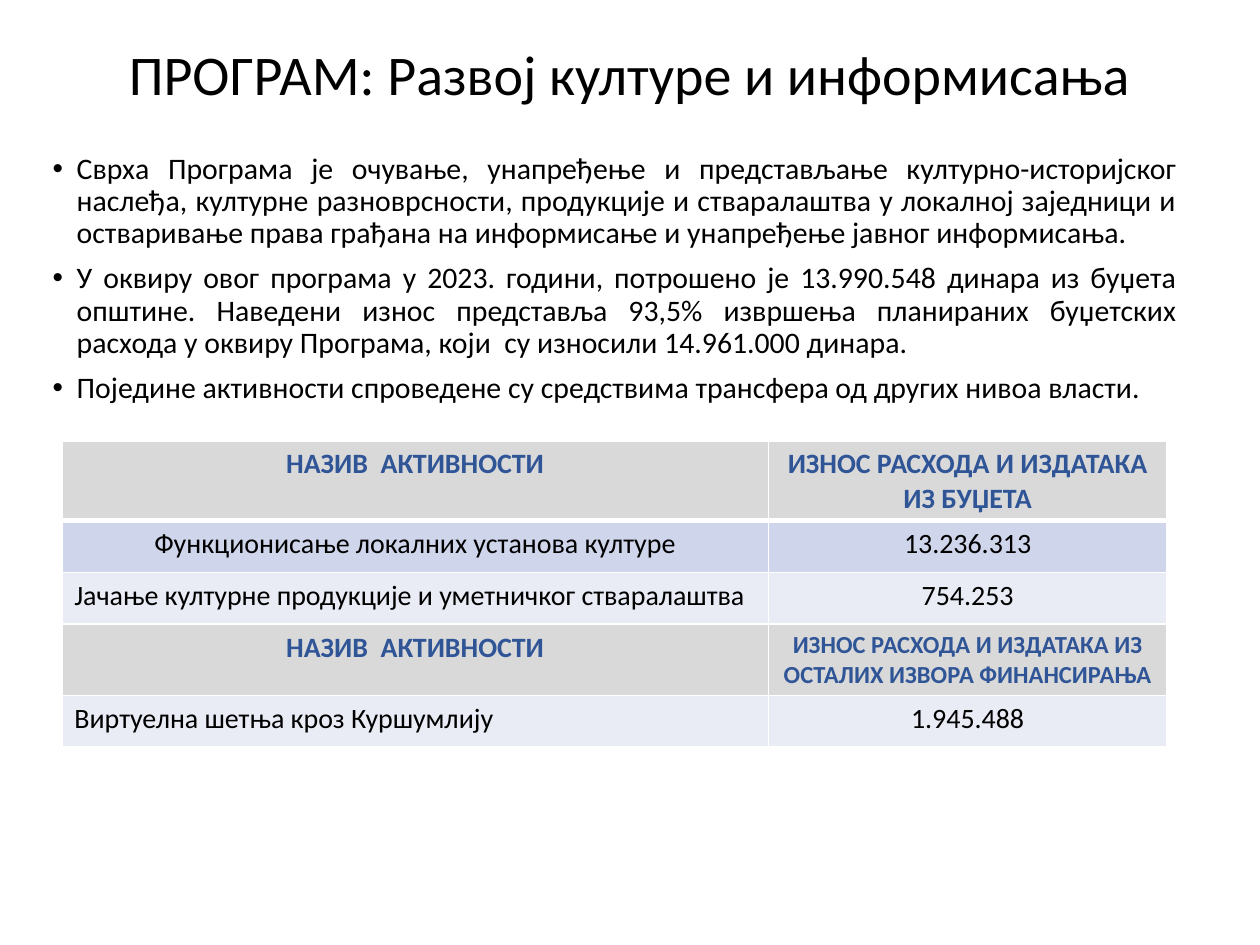
from lxml.etree import SubElement
from pptx import Presentation
from pptx.dml.color import RGBColor
from pptx.enum.text import MSO_ANCHOR, PP_ALIGN
from pptx.oxml.ns import qn
from pptx.util import Inches, Pt

BLACK, BLUE, WHITE = "000000", "2F5597", "FFFFFF"
GREY, LAVENDER, PALE = "D9D9D9", "CFD5EA", "E9EBF5"
LEFT, CENTER, JUSTIFY = PP_ALIGN.LEFT, PP_ALIGN.CENTER, PP_ALIGN.JUSTIFY

TITLE = "ПРОГРАМ: Развој културе и информисања"
BULLETS = [
    "Сврха Програма је очување, унапређење и представљање културно-историјског наслеђа, "
    "културне разноврсности, продукције и стваралаштва у локалној заједници и "
    "остваривање права грађана на информисање и унапређење јавног информисања.",
    "У оквиру овог програма у 2023. години, потрошено је 13.990.548 динара из буџета "
    "општине. Наведени износ представља 93,5% извршења планираних буџетских расхода "
    "у оквиру Програма, који  су износили 14.961.000 динара.",
    "Поједине активности спроведене су средствима трансфера од других нивоа власти.",
]
HEADING = {"size": 16, "bold": True, "color": BLUE}
ENTRY = {"size": 16, "bold": False, "color": BLACK}
ACTIVITY = ("НАЗИВ  АКТИВНОСТИ", CENTER, HEADING)
ROWS = [
    (GREY, [ACTIVITY, ("ИЗНОС РАСХОДА И ИЗДАТАКА ИЗ БУЏЕТА", CENTER, HEADING)]),
    (LAVENDER, [("Функционисање локалних установа културе", CENTER, ENTRY),
                ("13.236.313", CENTER, ENTRY)]),
    (PALE, [("Јачање културне продукције и уметничког стваралаштва", LEFT, ENTRY),
            ("754.253", CENTER, ENTRY)]),
    (GREY, [ACTIVITY, ("ИЗНОС РАСХОДА И ИЗДАТАКА ИЗ ОСТАЛИХ ИЗВОРА ФИНАНСИРАЊА",
                       CENTER, {**HEADING, "size": 14})]),
    (PALE, [("Виртуелна шетња кроз Куршумлију", LEFT, ENTRY),
            ("1.945.488", CENTER, ENTRY)]),
]


def rgb(value):
    """Turn a hex string into a colour."""
    return RGBColor.from_string(value)


class ProgramPage:
    """Hold the style and the current slide, and add elements to it."""

    font = "Calibri"

    def __init__(self, page):
        """Start on a blank slide."""
        self.page = page

    def add_span(self, para, text, size, color=BLACK, bold=False, **layout):
        """Put one styled run into a paragraph."""
        for name, value in layout.items():
            setattr(para, name, value)
        span = para.add_run()
        span.text = text
        for name, value in {"name": self.font, "size": Pt(size), "bold": bold}.items():
            setattr(span.font, name, value)
        span.font.color.rgb = rgb(color)

    def frame(self, left, top, width, height, anchor):
        """Add a wrapping text box and return its text frame."""
        lengths = [Inches(value) for value in (left, top, width, height)]
        box = self.page.shapes.add_textbox(*lengths).text_frame
        for name, value in {"word_wrap": True, "vertical_anchor": anchor}.items():
            setattr(box, name, value)
        return box

    def title(self, text):
        """Add the centred heading."""
        box = self.frame(0.3, 0.25, 9.4, 0.65, MSO_ANCHOR.BOTTOM)
        self.add_span(box.paragraphs[0], text, 32, alignment=CENTER, line_spacing=0.9)

    def bullets(self, texts):
        """Add the justified bullet list."""
        box = self.frame(0.32, 1.17, 9.12, 5.16, MSO_ANCHOR.TOP)
        for index, text in enumerate(texts):
            para = box.add_paragraph() if index else box.paragraphs[0]
            self.add_span(para, text, 17, alignment=JUSTIFY, line_spacing=0.9,
                          space_before=Pt(7.5))
            properties = para._p.get_or_add_pPr()
            properties.set("marL", str(Inches(0.19)))
            properties.set("indent", str(-Inches(0.19)))
            SubElement(properties, qn("a:buFont"), typeface="Arial")
            SubElement(properties, qn("a:buChar"), char="•")

    def borders(self, cell, widths):
        """Draw white cell borders, given widths in points by side."""
        properties = cell._tc.get_or_add_tcPr()
        for index, (side, width) in enumerate(widths.items()):
            line = properties.makeelement(qn(f"a:ln{side}"), {"w": str(Pt(width))})
            fill = SubElement(line, qn("a:solidFill"))
            SubElement(fill, qn("a:srgbClr"), val=WHITE)
            properties.insert(index, line)

    def table(self, rows, left, top, widths, row_height):
        """Add the table of activities and amounts."""
        grid = self.page.shapes.add_table(
            len(rows), len(widths), Inches(left), Inches(top),
            Inches(sum(widths)), Inches(row_height * len(rows))).table
        for column, width in zip(grid.columns, widths):
            column.width = Inches(width)
        for index, (fill, entries) in enumerate(rows):
            sides = {"L": 1, "R": 1, "T": 3 if index == 1 else 1,
                     "B": 1 if index else 3}
            for cell, (text, alignment, style) in zip(grid.rows[index].cells, entries):
                cell.fill.solid()
                cell.fill.fore_color.rgb = rgb(fill)
                self.borders(cell, sides)
                self.add_span(cell.text_frame.paragraphs[0], text,
                              alignment=alignment, **style)


def main():
    """Build and save the deck."""
    deck = Presentation()
    deck.slide_width, deck.slide_height = Inches(10), Inches(7.5)
    page = ProgramPage(deck.slides.add_slide(deck.slide_layouts[6]))
    page.title(TITLE)
    page.bullets(BULLETS)
    page.table(ROWS, 0.49, 3.5, (5.61, 3.16), 0.41)
    deck.save("out.pptx")


if __name__ == "__main__":
    main()
